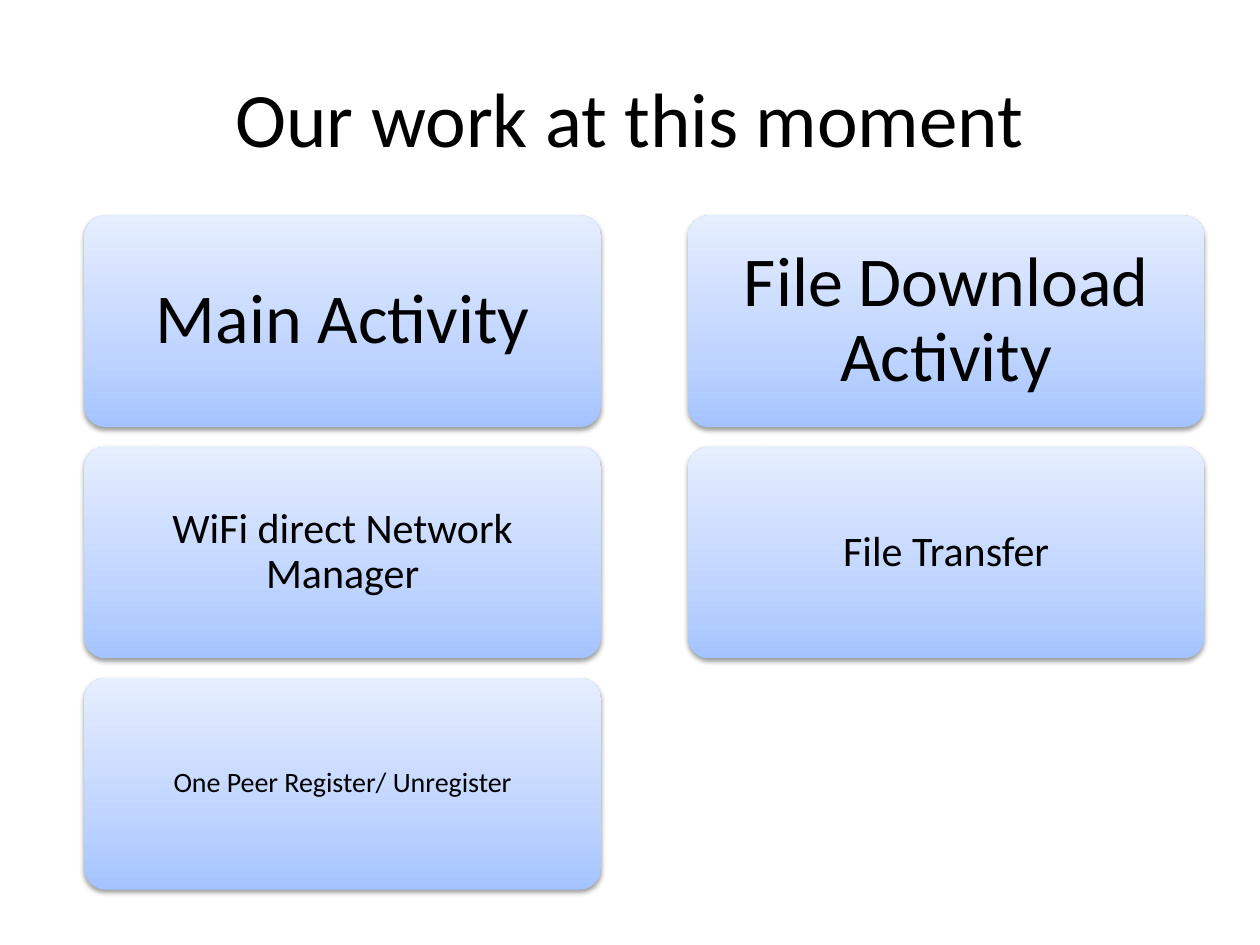
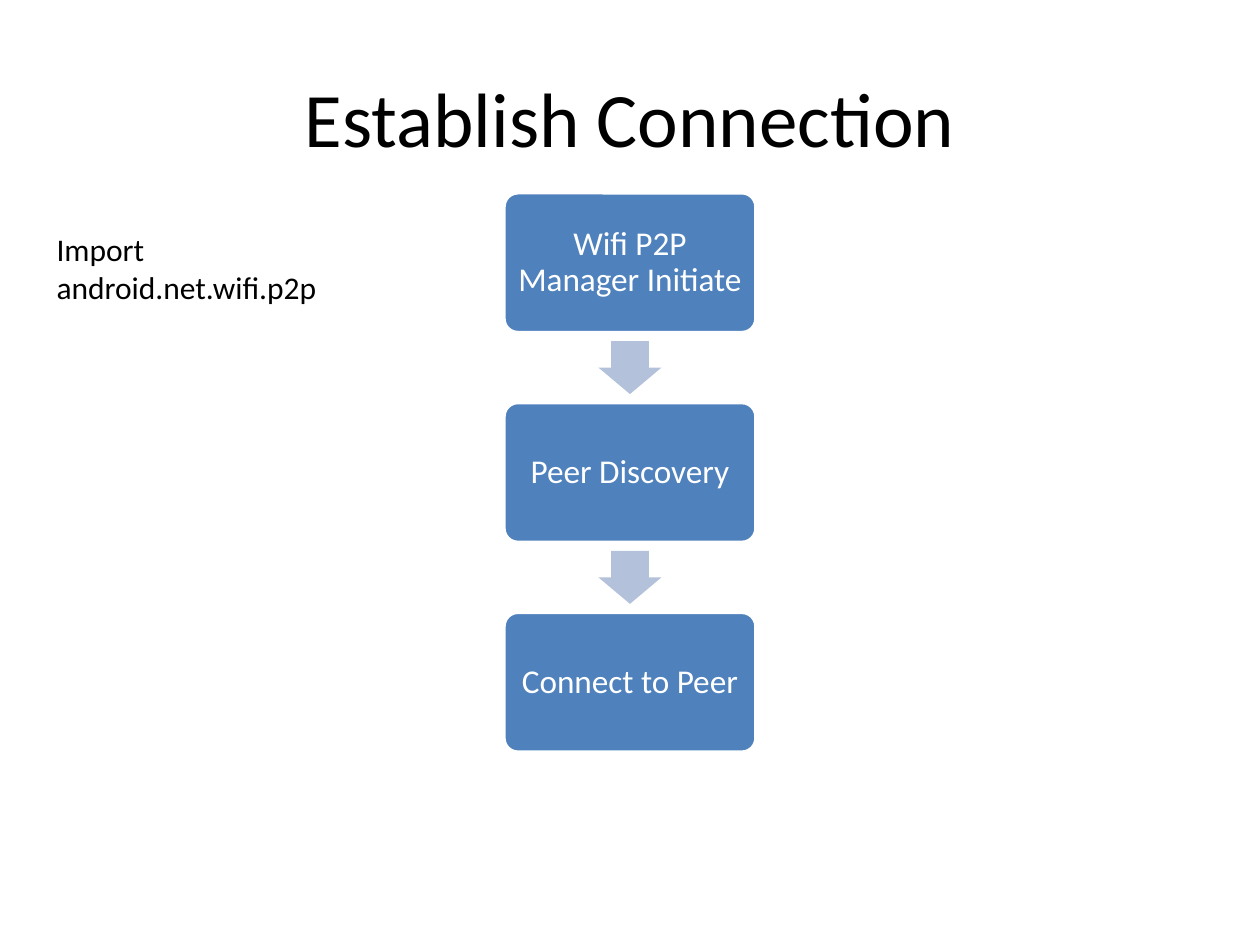
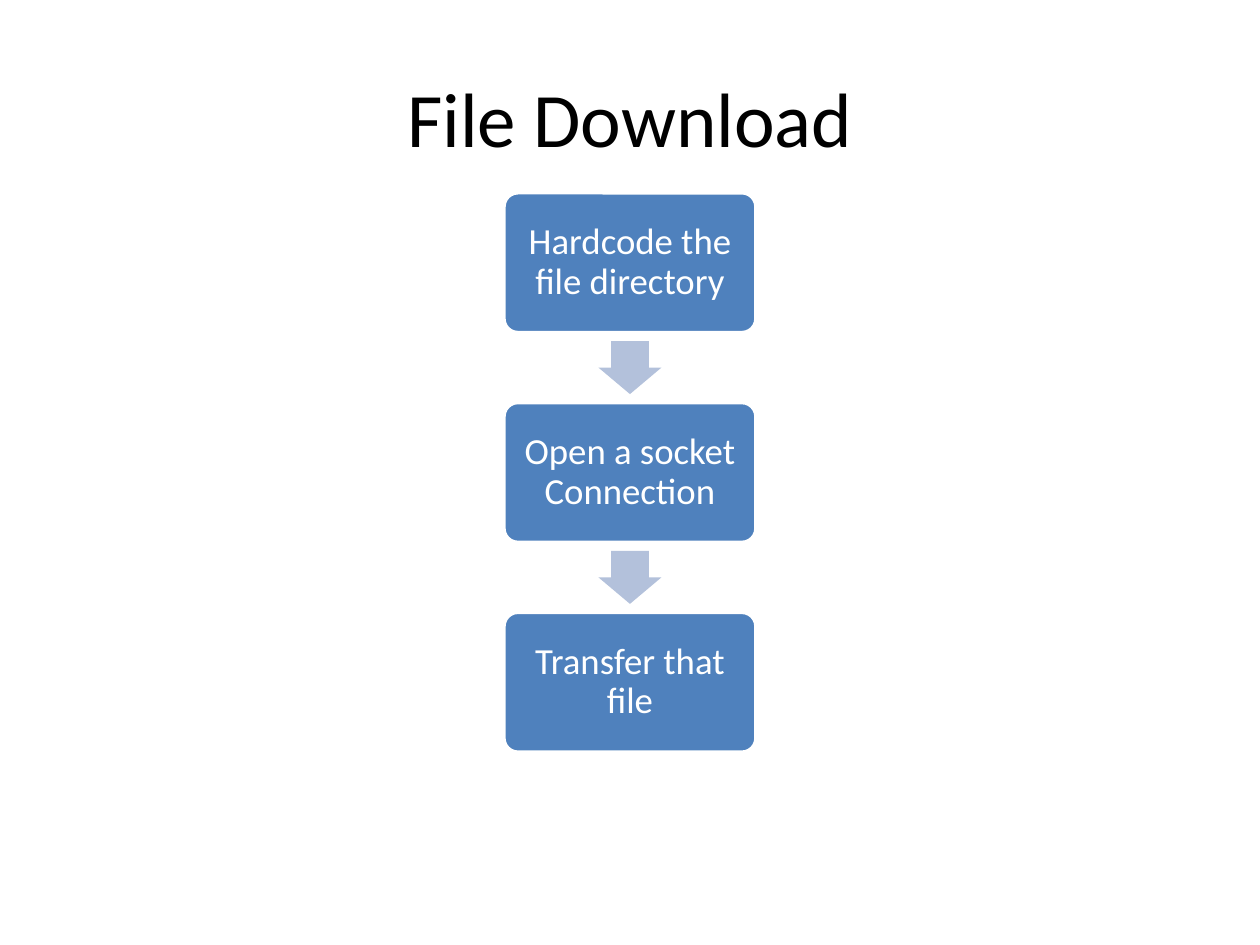
import pptx
import pptx.util
import pptx.dml.color
import pptx.enum.shapes
import pptx.enum.text
import lxml.etree
from pptx.oxml.ns import qn

Inches = pptx.util.Inches
Pt = pptx.util.Pt
RGBColor = pptx.dml.color.RGBColor
SHAPE = pptx.enum.shapes.MSO_SHAPE
ALIGN = pptx.enum.text.PP_ALIGN
ANCHOR = pptx.enum.text.MSO_ANCHOR

FONT = "Calibri"
BLACK = RGBColor(0, 0, 0)
WHITE = RGBColor(0xFF, 0xFF, 0xFF)
STEP_BLUE = RGBColor(0x4F, 0x81, 0xBD)
ARROW_BLUE = RGBColor(0xB3, 0xC1, 0xDB)
CARD_STOPS = (
    (0, RGBColor(0xA4, 0xC4, 0xFF)),
    (35, RGBColor(0xBF, 0xD4, 0xFF)),
    (100, RGBColor(0xE6, 0xEE, 0xFF)),
)

SLIDE_W, SLIDE_H = 10, 7.5
CORNER = 0.1
CARD_LEFT, CARD_TOP = 0.67, 1.71
CARD_W, CARD_H = 4.1, 1.68
COLUMN_PITCH, ROW_PITCH = 4.79, 1.835
CARD_SIZES = (40, 24, 16)
STEP_W, STEP_H, STEP_TOP = 2, 1.11, 1.53
STEP_GAP = STEP_H / 2
ARROW_W, ARROW_H = 0.5, 0.42


def write(tf, text, size, color, align=ALIGN.CENTER, spacing=1.0):
    tf.word_wrap = True
    p = tf.paragraphs[0]
    p.alignment = align
    p.line_spacing = spacing
    r = p.add_run()
    r.text = text
    r.font.color.rgb = color
    for name, value in {"name": FONT, "size": Pt(size)}.items():
        setattr(r.font, name, value)


def add_text(slide, box, text, size, align, anchor):
    tf = slide.shapes.add_textbox(*map(Inches, box)).text_frame
    tf.vertical_anchor = anchor
    write(tf, text, size, BLACK, align)


def add_plain(slide, kind, box, adjustments, color):
    s = slide.shapes.add_shape(kind, *map(Inches, box))
    for i, value in enumerate(adjustments):
        s.adjustments[i] = value
    s.shadow.inherit = False
    s.fill.solid()
    s.fill.fore_color.rgb = color
    s.line.fill.background()
    return s


def add_box(slide, box, text, size, fill, color):
    s = add_plain(slide, SHAPE.ROUNDED_RECTANGLE, box, [CORNER], fill)
    tf = s.text_frame
    corner_inset = 0.29 * CORNER * Inches(box[3])
    margin = int(0.3 * Pt(size) - corner_inset)
    for side in ("left", "top", "right", "bottom"):
        setattr(tf, f"margin_{side}", max(0, margin))
    tf.vertical_anchor = ANCHOR.MIDDLE
    write(tf, text, size, color, spacing=0.9)
    return s


def add_child(parent, tag, **attributes):
    child = lxml.etree.SubElement(parent, qn(tag))
    for name, value in attributes.items():
        child.set(name, str(value))
    return child


def add_gradient(s):
    s.fill.gradient()
    s.fill.gradient_angle = 90
    stops = s._element.spPr.find(".//" + qn("a:gsLst"))
    for stop in list(stops):
        stops.remove(stop)
    for position, color in CARD_STOPS:
        stop = add_child(stops, "a:gs", pos=position * 1000)
        add_child(stop, "a:srgbClr", val=color)


def add_shadow(s):
    effects = s._element.spPr.find(qn("a:effectLst"))
    shadow = add_child(effects, "a:outerShdw", blurRad=Pt(3.1), dist=Pt(1.6),
                       dir=90 * 60000, rotWithShape=0)
    color = add_child(shadow, "a:srgbClr", val=BLACK)
    add_child(color, "a:alpha", val=38000)


def add_card(slide, column, row, text):
    box = (CARD_LEFT + column * COLUMN_PITCH, CARD_TOP + row * ROW_PITCH,
           CARD_W, CARD_H)
    s = add_box(slide, box, text, CARD_SIZES[row], STEP_BLUE, BLACK)
    add_gradient(s)
    add_shadow(s)


def add_flow(slide, steps, size):
    for i, text in enumerate(steps):
        top = STEP_TOP + i * (STEP_H + STEP_GAP)
        if i:
            arrow_top = top - (STEP_GAP + ARROW_H) / 2
            box = ((SLIDE_W - ARROW_W) / 2, arrow_top, ARROW_W, ARROW_H)
            add_plain(slide, SHAPE.DOWN_ARROW, box, [0.6, 0.5], ARROW_BLUE)
        box = ((SLIDE_W - STEP_W) / 2, top, STEP_W, STEP_H)
        s = add_box(slide, box, text, size, STEP_BLUE, WHITE)
        s.line.color.rgb = WHITE
        s.line.width = Pt(2)


def add_slide(prs, title):
    slide = prs.slides.add_slide(prs.slide_layouts[6])
    box = (0.05 * SLIDE_W, 0.04 * SLIDE_H, 0.9 * SLIDE_W, SLIDE_H / 6)
    add_text(slide, box, title, 44, ALIGN.CENTER, ANCHOR.MIDDLE)
    return slide


def main():
    prs = pptx.Presentation()
    prs.slide_width, prs.slide_height = Inches(SLIDE_W), Inches(SLIDE_H)

    slide = add_slide(prs, "Our work at this moment")
    activities = (
        ("Main Activity", "WiFi direct Network Manager",
         "One Peer Register/ Unregister"),
        ("File Download Activity", "File Transfer"),
    )
    for column, cards in enumerate(activities):
        for row, text in enumerate(cards):
            add_card(slide, column, row, text)

    slide = add_slide(prs, "Establish Connection")
    add_flow(slide, ("Wifi P2P Manager Initiate", "Peer Discovery",
                     "Connect to Peer"), 19)
    add_text(slide, (0.35, 1.78, 2.99, 0.71), "Import android.net.wifi.p2p",
             18, ALIGN.LEFT, ANCHOR.TOP)

    slide = add_slide(prs, "File Download")
    add_flow(slide, ("Hardcode the file directory",
                     "Open a socket Connection", "Transfer that file"), 21)

    prs.save("out.pptx")


if __name__ == "__main__":
    main()
